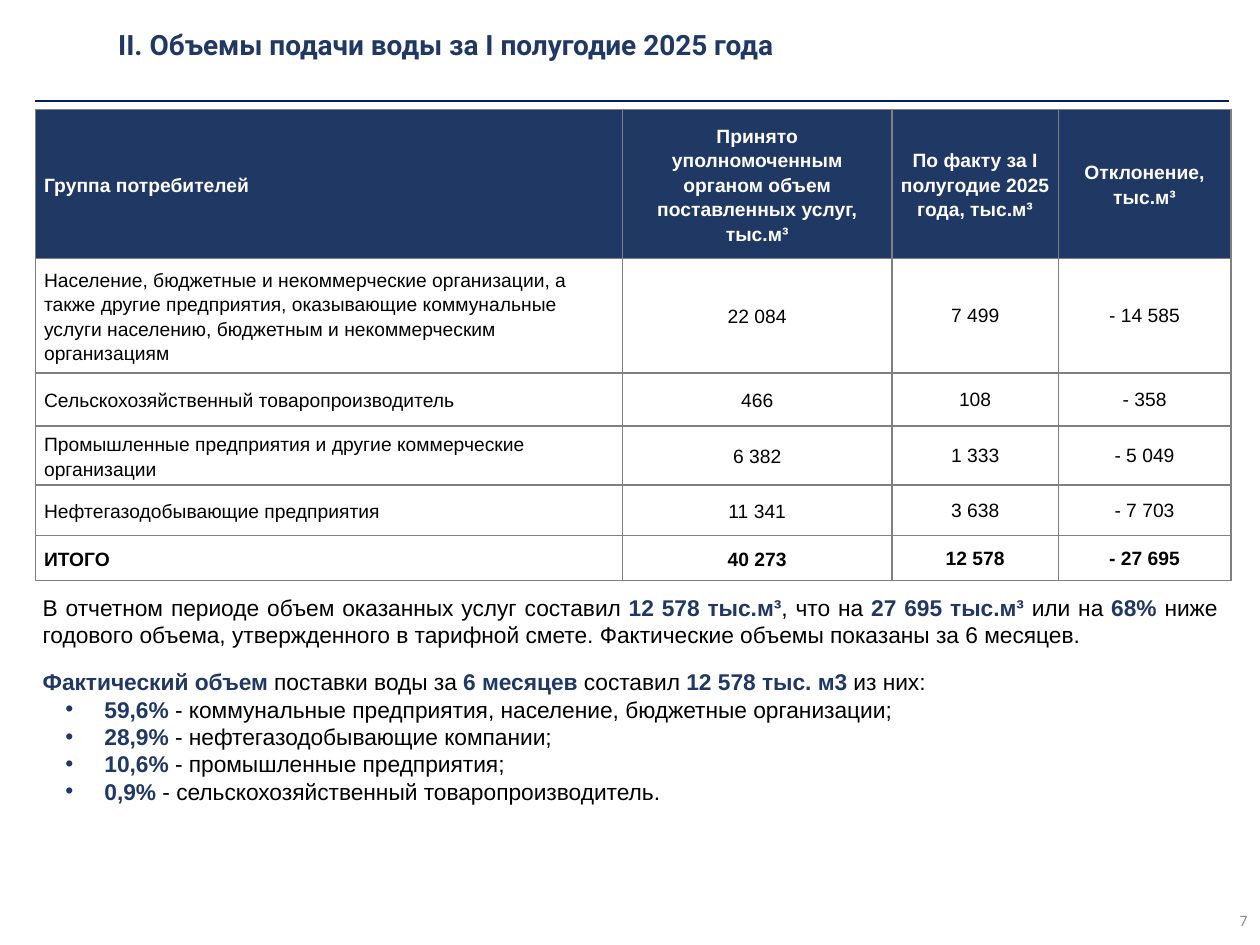
"""Build the slide on water supply volumes for the first half of 2025."""
from dataclasses import dataclass

from lxml.etree import SubElement
from pptx import Presentation
from pptx.dml.color import RGBColor as RGB
from pptx.enum.shapes import MSO_CONNECTOR as Connector
from pptx.enum.text import MSO_ANCHOR as Anchor, PP_ALIGN as Align
from pptx.oxml.ns import qn
from pptx.util import Inches, Pt


@dataclass(frozen=True)
class Theme:
    navy: str = "203864"
    rule: str = "002060"
    border: str = "808080"
    black: str = "000000"
    white: str = "FFFFFF"
    gray: str = "8C8C8C"
    title: int = 16
    body: int = 13
    table: int = 11
    page: int = 9


theme = Theme()


def write(paragraph, text, *, size, color=theme.black, bold=False, font="Arial",
          align=Align.LEFT, line_spacing=1.0, before=0):
    """Fill a paragraph; parts between asterisks become bold navy."""
    paragraph.alignment = align
    paragraph.line_spacing = line_spacing
    paragraph.space_before = Pt(before)
    for index, part in enumerate(text.split("*")):
        if part:
            run = paragraph.add_run()
            run.text = part
            accented = index % 2 == 1
            run.font.name = font
            run.font.size = Pt(size)
            run.font.bold = bold or accented
            run.font.color.rgb = RGB.from_string(theme.navy if accented else color)


def add_frame(left, top, width, height, anchor=Anchor.TOP):
    """Add a wrapping text box and return its text frame."""
    frame = slide.shapes.add_textbox(
        Inches(left), Inches(top), Inches(width), Inches(height)).text_frame
    frame.word_wrap = True
    frame.vertical_anchor = anchor
    return frame


presentation = Presentation()
presentation.slide_width = Inches(10)
presentation.slide_height = Inches(7.5)
slide = presentation.slides.add_slide(presentation.slide_layouts[6])

rows = [
    ("Группа потребителей",
     "Принято уполномоченным органом объем поставленных услуг, тыс.м³",
     "По факту за I полугодие 2025 года, тыс.м³", "Отклонение, тыс.м³"),
    ("Население, бюджетные и некоммерческие организации, а также другие "
     "предприятия, оказывающие коммунальные услуги населению, бюджетным и "
     "некоммерческим организациям", "22 084", "7 499", "- 14 585"),
    ("Сельскохозяйственный товаропроизводитель", "466", "108", "- 358"),
    ("Промышленные предприятия и другие коммерческие организации",
     "6 382", "1 333", "- 5 049"),
    ("Нефтегазодобывающие предприятия", "11 341", "3 638", "- 7 703"),
    ("ИТОГО", "40 273", "12 578", "- 27 695"),
]
column_widths = [4.66, 2.14, 1.32, 1.37]
row_heights = [1.18, 0.91, 0.42, 0.47, 0.4, 0.36]

volumes = slide.shapes.add_table(
    len(rows), len(column_widths), Inches(0.28), Inches(0.87),
    Inches(sum(column_widths)), Inches(sum(row_heights))).table
volumes.first_row = False
volumes.horz_banding = False
for column, width in zip(volumes.columns, column_widths):
    column.width = Inches(width)
for row, height in zip(volumes.rows, row_heights):
    row.height = Inches(height)

for row_index, values in enumerate(rows):
    heading = row_index == 0
    total = row_index == len(rows) - 1
    for column_index, value in enumerate(values):
        cell = volumes.cell(row_index, column_index)
        result = not heading and column_index >= 2
        cell.vertical_anchor = Anchor.MIDDLE
        cell.margin_left = cell.margin_right = Inches(0.01 if result else 0.07)
        cell.margin_top = Inches(0.01 if result else 0)
        cell.margin_bottom = 0
        properties = cell._tc.get_or_add_tcPr()
        for side in ("a:lnL", "a:lnR", "a:lnT", "a:lnB"):
            edge = SubElement(properties, qn(side), w=str(Pt(1)))
            edge_fill = SubElement(edge, qn("a:solidFill"))
            SubElement(edge_fill, qn("a:srgbClr"), val=theme.border)
        if heading:
            cell.fill.solid()
            cell.fill.fore_color.rgb = RGB.from_string(theme.navy)
        else:
            cell.fill.background()
        write(cell.text_frame.paragraphs[0], value, size=theme.table,
              color=theme.white if heading else theme.black, bold=heading or total,
              align=Align.CENTER if column_index else Align.LEFT,
              line_spacing=1.0 if result else 1.15)

summary = add_frame(0.24, 4.66, 9.52, 1.82)
write(summary.paragraphs[0],
      "В отчетном периоде объем оказанных услуг составил *12 578 тыс.м³*, что на "
      "*27 695 тыс.м³ *или на *68% *ниже годового объема, утвержденного в тарифной "
      "смете. Фактические объемы показаны за 6 месяцев.",
      size=theme.body, align=Align.JUSTIFY)
write(summary.add_paragraph(),
      "*Фактический объем* поставки воды за *6 месяцев *составил "
      "*12 578 тыс. м3 *из них:",
      size=theme.body, align=Align.JUSTIFY, before=11.5)

shares = [
    ("59,6%", "коммунальные предприятия, население, бюджетные организации;"),
    ("28,9%", "нефтегазодобывающие компании;"),
    ("10,6%", "промышленные предприятия;"),
    ("0,9%", "сельскохозяйственный товаропроизводитель."),
]
for share, group in shares:
    item = summary.add_paragraph()
    layout = item._p.get_or_add_pPr()
    layout.set("marL", str(Inches(0.49)))
    layout.set("indent", str(Inches(-0.31)))
    bullet_color = SubElement(layout, qn("a:buClr"))
    SubElement(bullet_color, qn("a:srgbClr"), val=theme.navy)
    SubElement(layout, qn("a:buFont"), typeface="Arial")
    SubElement(layout, qn("a:buChar"), char="•")
    write(item, f"*{share} *- {group}", size=theme.body, align=Align.JUSTIFY)

page_number = add_frame(7.75, 7.1, 2.25, 0.4, Anchor.MIDDLE)
write(page_number.paragraphs[0], "7", size=theme.page, color=theme.gray,
      font="Calibri", align=Align.RIGHT)

title = add_frame(0.84, 0.14, 8.93, 0.42, Anchor.MIDDLE)
write(title.paragraphs[0], "II. Объемы подачи воды за I полугодие 2025 года",
      size=theme.title, color=theme.navy, bold=True, font="Roboto")

title_rule = slide.shapes.add_connector(
    Connector.STRAIGHT, Inches(0.28), Inches(0.8), Inches(9.75), Inches(0.8))
title_rule.line.color.rgb = RGB.from_string(theme.rule)
title_rule.line.width = Pt(1)
SubElement(title_rule._element.spPr, qn("a:effectLst"))

presentation.save("out.pptx")
